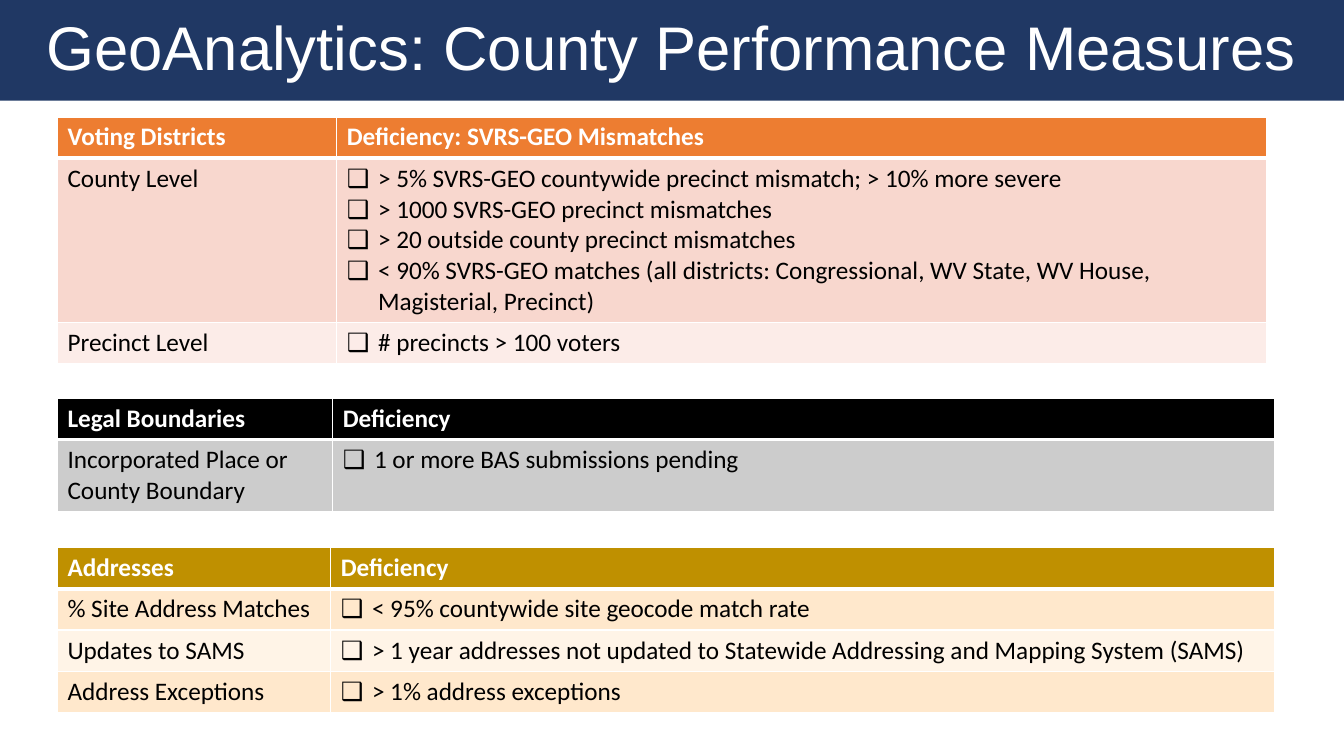
import pptx
import pptx.util
import pptx.dml.color
import pptx.enum.shapes
import pptx.enum.text
import pptx.oxml
import pptx.oxml.ns
from pptx.util import Inches

COLORS = {
    "navy": "203864", "white": "FFFFFF", "black": "000000",
    "orange": "ED7D31", "peach": "F8D7CE", "blush": "FCECE8",
    "gray": "CCCCCC", "gold": "BF9000", "cream": "FFE8CC", "ivory": "FFF4E7",
}
TITLE = {"name": "Arial", "size": pptx.util.Pt(44), "bold": False}
HEAD = {"name": "Calibri", "size": pptx.util.Pt(18), "bold": True}
BODY = {**HEAD, "bold": False}
LEFT = 0.57
ROW = 0.41

# Each table: top, column widths, row heights, header, header color, bands, rows
TABLES = [
    (1.16, (2.77, 9.22), (ROW, 1.6, ROW),
     ("Voting Districts", "Deficiency: SVRS-GEO Mismatches"),
     "orange", ("peach", "blush"),
     [("County Level", [
         "> 5% SVRS-GEO countywide precinct mismatch; > 10% more severe",
         "> 1000 SVRS-GEO precinct mismatches",
         "> 20 outside county precinct mismatches",
         "< 90% SVRS-GEO matches (all districts: Congressional, WV State, "
         "WV House, Magisterial, Precinct)"]),
      ("Precinct Level", ["# precincts > 100 voters"])]),
    (3.95, (2.73, 9.34), (ROW, 0.7),
     ("Legal Boundaries", "Deficiency"), "black", ("gray",),
     [("Incorporated Place or County Boundary",
       ["1 or more BAS submissions pending"])]),
    (5.43, (2.71, 9.36), (ROW,) * 4,
     ("Addresses", "Deficiency"), "gold", ("cream", "ivory"),
     [("% Site Address Matches", ["< 95% countywide site geocode match rate"]),
      ("Updates to SAMS", ["> 1 year addresses not updated to Statewide "
                           "Addressing and Mapping System (SAMS)"]),
      ("Address Exceptions", ["> 1% address exceptions"])]),
]


def rgb(name):
    return pptx.dml.color.RGBColor.from_string(COLORS[name])


def paint(item, color):
    item.fill.solid()
    item.fill.fore_color.rgb = rgb(color)


def write(para, text, style, color):
    run = para.add_run()
    run.text = text
    for key, value in style.items():
        setattr(run.font, key, value)
    run.font.color.rgb = rgb(color)


def add_xml(parent, tag, attrs, inner=""):
    space = pptx.oxml.ns.nsdecls("a")
    parent.append(pptx.oxml.parse_xml(
        f"<a:{tag} {space} {attrs}>{inner}</a:{tag}>"))


def add_box(para):
    """Give a paragraph a hanging check box bullet."""
    props = para._p.get_or_add_pPr()
    props.set("marL", str(Inches(0.31)))
    props.set("indent", str(-Inches(0.31)))
    add_xml(props, "buFont", 'typeface="Arial"')
    add_xml(props, "buChar", 'char="❑"')


def add_edges(cell, base, top):
    """Draw white cell borders with the given bottom and top widths."""
    props = cell._tc.get_or_add_tcPr()
    fill = f'<a:solidFill><a:srgbClr val="{COLORS["white"]}"/></a:solidFill>'
    for side, width in (("L", 1), ("R", 1), ("T", top), ("B", base)):
        add_xml(props, f"ln{side}", f'w="{pptx.util.Pt(width)}"', fill)


def fill_cell(cell, lines, style, ink, color, base=1, top=1, boxes=False):
    add_edges(cell, base, top)
    paint(cell, color)
    frame = cell.text_frame
    for i, line in enumerate(lines):
        para = frame.add_paragraph() if i else frame.paragraphs[0]
        if boxes:
            add_box(para)
        write(para, line, style, ink)


def add_grid(slide, top, widths, heights, header, tint, bands, rows):
    grid = slide.shapes.add_table(
        len(heights), len(widths), Inches(LEFT), Inches(top),
        Inches(sum(widths)), Inches(sum(heights))).table
    for col, width in zip(grid.columns, widths):
        col.width = Inches(width)
    for row, height in zip(grid.rows, heights):
        row.height = Inches(height)
    for c, text in enumerate(header):
        fill_cell(grid.cell(0, c), [text], HEAD, "white", tint, base=3)
    for r, (label, items) in enumerate(rows, 1):
        band = bands[(r - 1) % len(bands)]
        top = 3 if r == 1 else 1
        fill_cell(grid.cell(r, 0), [label], BODY, "black", band, top=top)
        fill_cell(grid.cell(r, 1), items, BODY, "black", band, top=top,
                  boxes=True)


def add_title(slide, text):
    bar = slide.shapes.add_shape(
        pptx.enum.shapes.MSO_SHAPE.RECTANGLE, 0, 0, Inches(13.33), Inches(1))
    bar.shadow.inherit = False
    paint(bar, "navy")
    bar.line.fill.background()
    bar.text_frame.word_wrap = True
    bar.text_frame.vertical_anchor = pptx.enum.text.MSO_ANCHOR.MIDDLE
    para = bar.text_frame.paragraphs[0]
    para.alignment = pptx.enum.text.PP_ALIGN.CENTER
    para.line_spacing = 0.9
    write(para, text, TITLE, "white")


def main():
    deck = pptx.Presentation()
    deck.slide_width = Inches(13.33)
    deck.slide_height = Inches(7.5)
    slide = deck.slides.add_slide(deck.slide_layouts[6])
    add_title(slide, "GeoAnalytics: County Performance Measures")
    for table in TABLES:
        add_grid(slide, *table)
    deck.save("out.pptx")


if __name__ == "__main__":
    main()
